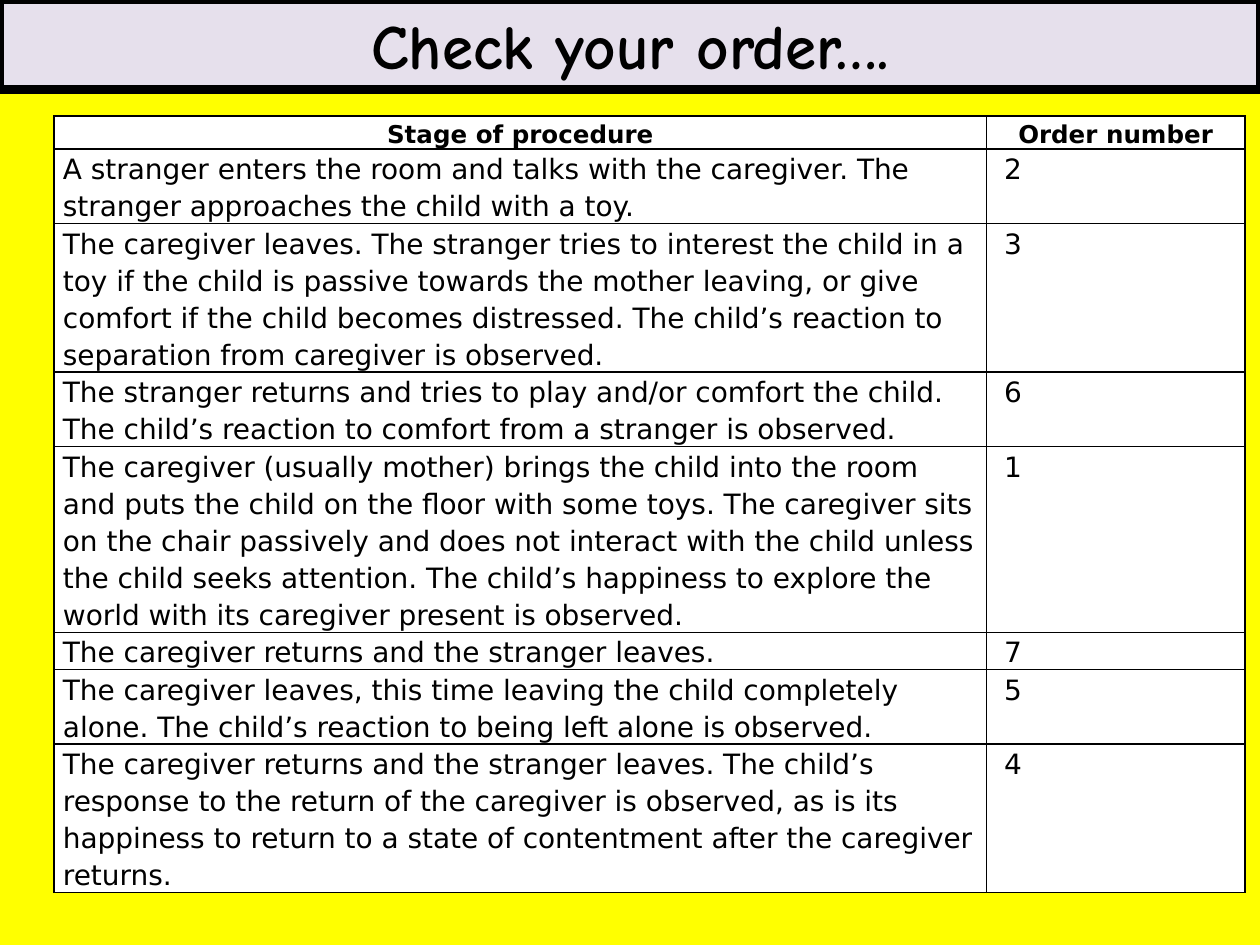
from dataclasses import dataclass

from lxml.etree import SubElement
from pptx import Presentation
from pptx.dml.color import RGBColor
from pptx.enum.text import MSO_ANCHOR, PP_ALIGN
from pptx.oxml.ns import qn
from pptx.slide import Slide
from pptx.table import _Cell
from pptx.util import Inches, Pt


@dataclass(frozen=True)
class Theme:
    background: str = "FFFF00"
    banner: str = "E6E0EC"
    paper: str = "FFFFFF"
    ink: str = "000000"
    title_font: str = "Comic Neue"
    body_font: str = "DejaVu Sans"
    title_size: int = 36
    head_size: int = 14
    body_size: int = 16


@dataclass(frozen=True)
class Stage:
    text: str
    order: int
    lines: int


THEME = Theme()
HEAD_HEIGHT, LINE_HEIGHT = 0.26, 0.295
HEADINGS = ("Stage of procedure", "Order number")
COLUMN_WIDTHS = (7.4, 2.05)
STAGES = (
    Stage("A stranger enters the room and talks with the caregiver. The stranger "
          "approaches the child with a toy.", 2, 2),
    Stage("The caregiver leaves. The stranger tries to interest the child in a toy if "
          "the child is passive towards the mother leaving, or give comfort if the child "
          "becomes distressed. The child’s reaction to separation from caregiver is "
          "observed.", 3, 4),
    Stage("The stranger returns and tries to play and/or comfort the child. The child’s "
          "reaction to comfort from a stranger is observed.", 6, 2),
    Stage("The caregiver (usually mother) brings the child into the room and puts the "
          "child on the floor with some toys. The caregiver sits on the chair passively "
          "and does not interact with the child unless the child seeks attention. The "
          "child’s happiness to explore the world with its caregiver present is "
          "observed.", 1, 5),
    Stage("The caregiver returns and the stranger leaves.", 7, 1),
    Stage("The caregiver leaves, this time leaving the child completely alone. The "
          "child’s reaction to being left alone is observed.", 5, 2),
    Stage("The caregiver returns and the stranger leaves. The child’s response to the "
          "return of the caregiver is observed, as is its happiness to return to a state "
          "of contentment after the caregiver returns.", 4, 4),
)


def rgb(value: str) -> RGBColor:
    """Turn a hex string into a colour."""
    return RGBColor.from_string(value)


def add_borders(cell: _Cell) -> None:
    """Rule all four sides of a cell."""
    tc_pr = cell._tc.get_or_add_tcPr()
    for side in ("lnL", "lnR", "lnT", "lnB"):
        ln = SubElement(tc_pr, qn(f"a:{side}"), w=str(Pt(1)))
        fill = SubElement(ln, qn("a:solidFill"))
        SubElement(fill, qn("a:srgbClr"), val=THEME.ink)


def fill_cell(cell: _Cell, text: str, heading: bool) -> None:
    """Write and format one table cell."""
    add_borders(cell)
    cell.fill.solid()
    cell.fill.fore_color.rgb = rgb(THEME.paper)
    cell.margin_left = cell.margin_right = Inches(0.07)
    cell.margin_top = cell.margin_bottom = 0
    p = cell.text_frame.paragraphs[0]
    p.text = text
    p.alignment = PP_ALIGN.CENTER if heading else PP_ALIGN.LEFT
    p.line_spacing = 1.15
    p.font.name = THEME.body_font
    p.font.size = Pt(THEME.head_size if heading else THEME.body_size)
    p.font.bold = heading
    p.font.color.rgb = rgb(THEME.ink)


def add_stage_table(s: Slide) -> None:
    """Draw the table of stages and their order numbers."""
    rows = [HEADINGS] + [(stage.text, f" {stage.order}") for stage in STAGES]
    heights = [HEAD_HEIGHT] + [stage.lines * LINE_HEIGHT for stage in STAGES]
    table = s.shapes.add_table(
        len(rows), len(HEADINGS), Inches(0.43), Inches(0.92),
        Inches(sum(COLUMN_WIDTHS)), Inches(sum(heights))).table
    table.horz_banding = False
    for column, width in zip(table.columns, COLUMN_WIDTHS):
        column.width = Inches(width)
    for i, (texts, height) in enumerate(zip(rows, heights)):
        table.rows[i].height = Inches(height)
        for j, text in enumerate(texts):
            fill_cell(table.cell(i, j), text, heading=i == 0)


def set_title(s: Slide, text: str) -> None:
    """Format the title placeholder as a banner across the top."""
    sp = s.shapes.title
    sp.left, sp.top, sp.width, sp.height = 0, 0, Inches(10), Inches(0.71)
    sp.fill.solid()
    sp.fill.fore_color.rgb = rgb(THEME.banner)
    sp.line.color.rgb = rgb(THEME.ink)
    sp.line.width = Pt(5)
    tf = sp.text_frame
    tf.word_wrap = True
    tf.vertical_anchor = MSO_ANCHOR.MIDDLE
    p = tf.paragraphs[0]
    p.text = text
    p.alignment = PP_ALIGN.CENTER
    p.font.name = THEME.title_font
    p.font.size = Pt(THEME.title_size)
    p.font.bold = True
    p.font.color.rgb = rgb(THEME.ink)


def main() -> None:
    """Build and save the slide."""
    prs = Presentation()
    prs.slide_width, prs.slide_height = Inches(10), Inches(7.5)
    s = prs.slides.add_slide(prs.slide_layouts[5])
    s.background.fill.solid()
    s.background.fill.fore_color.rgb = rgb(THEME.background)
    set_title(s, "Check your order….")
    add_stage_table(s)
    prs.save("out.pptx")


if __name__ == "__main__":
    main()
